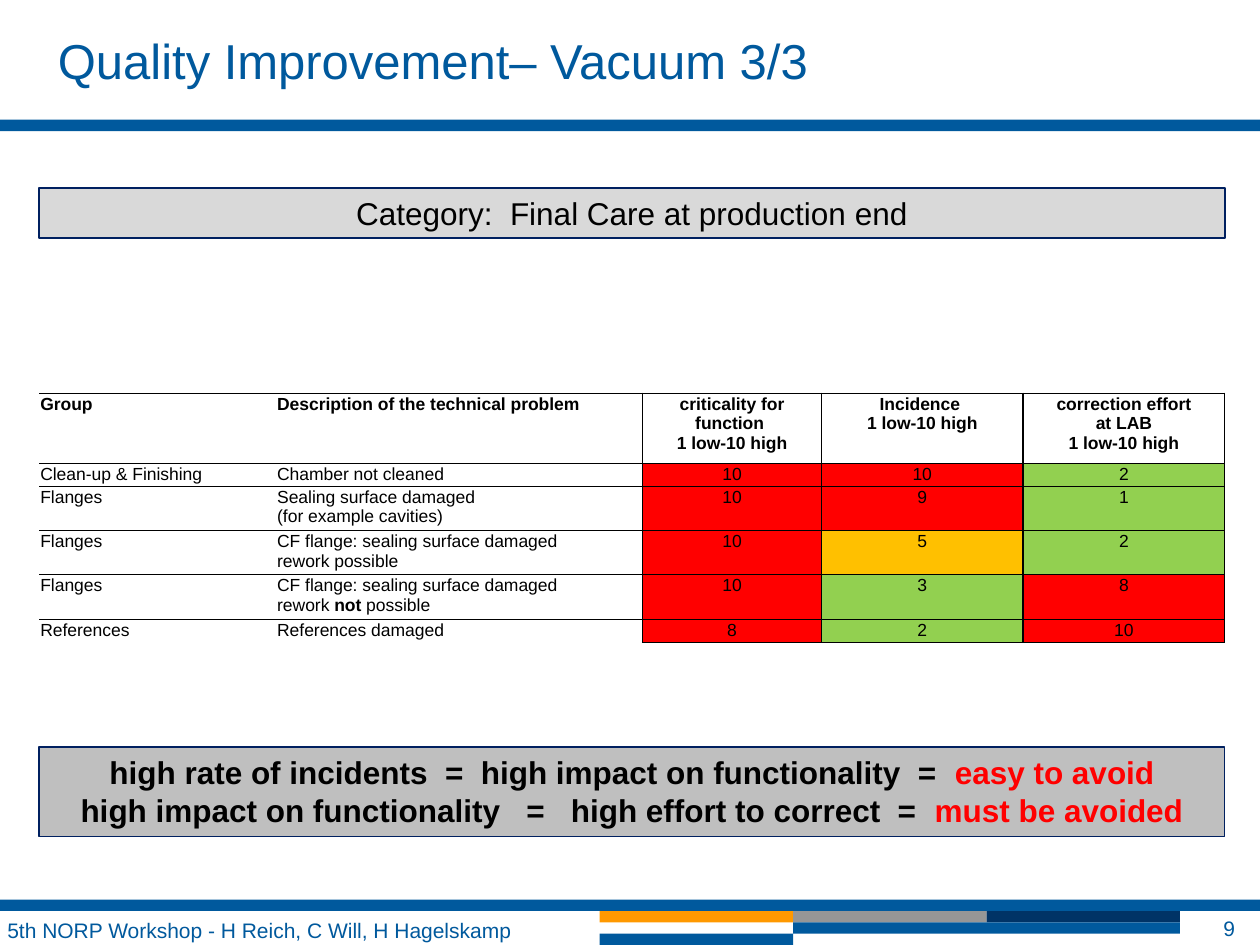
from copy import deepcopy
from dataclasses import dataclass
from typing import NamedTuple

from lxml import etree
from pptx import Presentation
from pptx.dml.color import RGBColor
from pptx.enum import shapes, text
from pptx.oxml.ns import qn
from pptx.util import Inches, Pt

COLORS = {
    "blue": "00599D", "navy": "003366", "orange": "FF9900", "gray": "969696",
    "outline": "002060", "light": "D9D9D9", "silver": "BFBFBF", "black": "000000",
    "red": "FF0000", "amber": "FFC000", "green": "92D050",
}
LEFT, WIDTH = 0.31, 9.41
BAR_HEIGHT = 0.09
BLOCK_LEFT, BLOCK_WIDTH = 4.76, 1.535
BLOCK_TOP = 7.23


class Span(NamedTuple):
    text: str
    bold: bool = False
    color: str = "black"


class Bar(NamedTuple):
    left: float
    top: float
    width: float
    color: str


@dataclass
class Banner:
    top: float
    height: float
    fill: str
    line_width: float
    lines: list[list[Span]]


@dataclass
class Problem:
    group: str
    description: list[Span]
    ratings: tuple[int, int, int]
    height: float


def block_left(index: int) -> float:
    return BLOCK_LEFT + index * BLOCK_WIDTH


BARS = [
    Bar(block_left(index), BLOCK_TOP, BLOCK_WIDTH, color)
    for index, color in enumerate(("orange", "gray", "navy"))
] + [
    Bar(0, BLOCK_TOP - BAR_HEIGHT, 10, "blue"),
    Bar(block_left(1), BLOCK_TOP + BAR_HEIGHT, 2 * BLOCK_WIDTH, "blue"),
    Bar(block_left(0), BLOCK_TOP + 2 * BAR_HEIGHT, BLOCK_WIDTH, "blue"),
    Bar(0, 0.95, 10, "blue"),
]
BANNERS = [
    Banner(1.49, 0.4, "light", 1.25, [[Span("Category:  Final Care at production end")]]),
    Banner(5.93, 0.71, "silver", 1, [
        [Span("high rate of incidents  =  high impact on functionality  =  ", True),
         Span("easy to avoid", True, "red")],
        [Span("high impact on functionality   =   high effort to correct  =  ", True),
         Span("must be avoided", True, "red")],
    ]),
]
COLUMN_WIDTHS = (1.88, 2.91, 1.42, 1.6, 1.6)
HEADER_HEIGHT = 0.56
HEADERS = (
    "Group",
    "Description of the technical problem",
    "criticality for function \v1 low-10 high",
    "Incidence \v1 low-10 high",
    "correction effort\v at LAB \v1 low-10 high",
)
CF_FLANGE = "CF flange: sealing surface damaged\vrework "
PROBLEMS = [
    Problem("Clean-up & Finishing", [Span("Chamber not cleaned")], (10, 10, 2), 0.18),
    Problem("Flanges", [Span("Sealing surface damaged \v(for example cavities)")],
            (10, 9, 1), 0.35),
    Problem("Flanges", [Span(CF_FLANGE + "possible")], (10, 5, 2), 0.35),
    Problem("Flanges", [Span(CF_FLANGE), Span("not", True), Span(" possible")],
            (10, 3, 8), 0.36),
    Problem("References", [Span("References damaged")], (8, 2, 10), 0.18),
]


def rgb(name: str) -> RGBColor:
    return RGBColor.from_string(COLORS[name])


def rating_color(rating: int) -> str:
    if rating >= 8:
        return "red"
    return "amber" if rating >= 5 else "green"


def write_spans(paragraph, spans: list[Span], size: float, align=None) -> None:
    """Fill a paragraph; a vertical tab in the first span is a line break."""
    paragraph.alignment = align
    for index, span in enumerate(spans):
        start = len(paragraph.runs)
        if index == 0:
            paragraph.text = span.text
        else:
            paragraph.add_run().text = span.text
        for run in paragraph.runs[start:]:
            run.font.name = "Arial"
            run.font.size = Pt(size)
            run.font.bold = span.bold
            run.font.color.rgb = rgb(span.color)
    properties = paragraph.runs[0]._r.find(qn("a:rPr"))
    for line_break in paragraph._p.findall(qn("a:br")):
        line_break.append(deepcopy(properties))


def add_rectangle(slide, left: float, top: float, width: float, height: float, fill: str):
    shape = slide.shapes.add_shape(shapes.MSO_SHAPE.RECTANGLE, Inches(left), Inches(top),
                                   Inches(width), Inches(height))
    shape.shadow.inherit = False
    shape.fill.solid()
    shape.fill.fore_color.rgb = rgb(fill)
    shape.line.fill.background()
    return shape


def add_banner(slide, banner: Banner) -> None:
    shape = add_rectangle(slide, LEFT, banner.top, WIDTH, banner.height, banner.fill)
    shape.line.color.rgb = rgb("outline")
    shape.line.width = Pt(banner.line_width)
    frame = shape.text_frame
    frame.word_wrap = True
    frame.auto_size = text.MSO_AUTO_SIZE.SHAPE_TO_FIT_TEXT
    frame.vertical_anchor = text.MSO_ANCHOR.TOP
    for index, spans in enumerate(banner.lines):
        paragraph = frame.add_paragraph() if index else frame.paragraphs[0]
        write_spans(paragraph, spans, 18, text.PP_ALIGN.CENTER)


def add_label(slide, left: float, top: float, width: float, height: float,
              wording: str, size: float, align=None):
    box = slide.shapes.add_textbox(Inches(left), Inches(top), Inches(width), Inches(height))
    box.text_frame.word_wrap = True
    write_spans(box.text_frame.paragraphs[0], [Span(wording, color="blue")], size, align)
    return box.text_frame


def set_borders(cell, widths: dict[str, float]) -> None:
    """Draw black borders in points on the sides L, R, T and B; zero hides one."""
    properties = cell._tc.get_or_add_tcPr()
    for side in "LRTB":
        width = widths[side]
        line = etree.SubElement(properties, qn(f"a:ln{side}"), w=str(Pt(width)))
        if width:
            fill = etree.SubElement(line, qn("a:solidFill"))
            etree.SubElement(fill, qn("a:srgbClr"), val=COLORS["black"])
        else:
            etree.SubElement(line, qn("a:noFill"))


def add_problem_table(slide) -> None:
    heights = [HEADER_HEIGHT] + [problem.height for problem in PROBLEMS]
    table = slide.shapes.add_table(len(heights), len(COLUMN_WIDTHS), Inches(LEFT), Inches(3.12),
                                   Inches(WIDTH), Inches(sum(heights))).table
    table.first_row = table.horz_banding = False
    for column, width in zip(table.columns, COLUMN_WIDTHS):
        column.width = Inches(width)
    contents = [[[Span(header, True)] for header in HEADERS]]
    for problem in PROBLEMS:
        ratings = [[Span(str(rating))] for rating in problem.ratings]
        contents.append([[Span(problem.group)], problem.description, *ratings])
    for row, (height, spans_by_column) in enumerate(zip(heights, contents)):
        table.rows[row].height = Inches(height)
        for column, spans in enumerate(spans_by_column):
            cell = table.cell(row, column)
            rated = column >= 2
            cell.margin_left = cell.margin_right = cell.margin_top = Inches(0.01)
            cell.margin_bottom = 0
            write_spans(cell.text_frame.paragraphs[0], spans, 10,
                        text.PP_ALIGN.CENTER if rated else None)
            last_row = row == len(heights) - 1
            set_borders(cell, {"L": 1 if rated else 0, "R": 1 if column else 0, "T": 0.5,
                               "B": 0 if last_row and not rated else 0.5})
            if rated and row:
                cell.fill.solid()
                cell.fill.fore_color.rgb = rgb(rating_color(PROBLEMS[row - 1].ratings[column - 2]))
            else:
                cell.fill.background()


def main() -> None:
    presentation = Presentation()
    presentation.slide_width, presentation.slide_height = Inches(10), Inches(7.5)
    slide = presentation.slides.add_slide(presentation.slide_layouts[6])
    for bar in BARS:
        add_rectangle(slide, bar.left, bar.top, bar.width, BAR_HEIGHT, bar.color)
    title = add_label(slide, 0.46, 0.24, 9.41, 0.43, "Quality Improvement– Vacuum 3/3", 28)
    title.margin_left = title.margin_right = title.margin_top = title.margin_bottom = 0
    for banner in BANNERS:
        add_banner(slide, banner)
    add_problem_table(slide)
    add_label(slide, -0.04, 7.23, 4.8, 0.27,
              "5th NORP Workshop - H Reich, C Will, H Hagelskamp", 12)
    number = add_label(slide, 9.1, 7.23, 0.8, 0.27, "9", 12, text.PP_ALIGN.RIGHT)
    number.margin_top = number.margin_bottom = 0
    number.vertical_anchor = text.MSO_ANCHOR.MIDDLE
    presentation.save("out.pptx")


if __name__ == "__main__":
    main()
